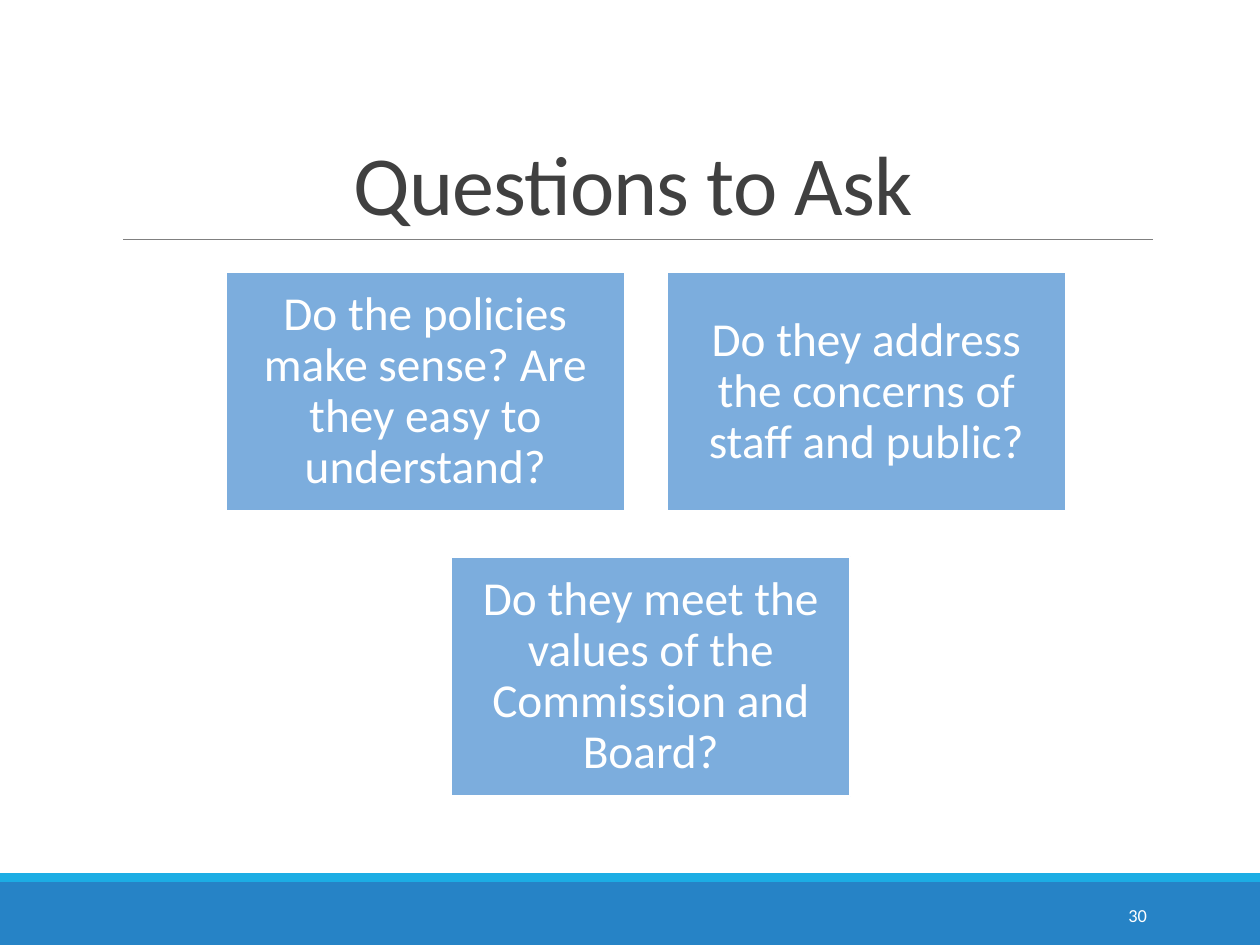
"""Build the "Questions to Ask" slide with three question boxes."""
from pptx import Presentation
from pptx.dml.color import RGBColor
from pptx.enum.shapes import MSO_CONNECTOR, MSO_SHAPE
from pptx.enum.text import MSO_ANCHOR, PP_ALIGN
from pptx.oxml.ns import qn
from pptx.util import Inches, Pt

RECTANGLE = MSO_SHAPE.RECTANGLE
STRAIGHT = MSO_CONNECTOR.STRAIGHT
BOTTOM, MIDDLE = MSO_ANCHOR.BOTTOM, MSO_ANCHOR.MIDDLE
CENTER, RIGHT = PP_ALIGN.CENTER, PP_ALIGN.RIGHT

TITLE = "Questions to Ask"
PAGE_NUMBER = "30"
QUESTIONS = [
    ("Do the policies make sense? Are they easy to understand?", 1.79, 2.16),
    ("Do they address the concerns of staff and public?", 5.29, 2.16),
    ("Do they meet the values of the Commission and Board?", 3.58, 4.42),
]
QUESTION_SIZE = (3.17, 1.9)
FOOTER_BANDS = [("blue", 7, 0.5), ("cyan", 6.93, 0.07)]
FONT = "Calibri"
COLORS = {
    "blue": "2683C6",
    "cyan": "1CADE4",
    "box": "7CADDD",
    "rule": "808080",
    "title": "404040",
    "white": "FFFFFF",
}


def color(name):
    return RGBColor.from_string(COLORS[name])


def add_rectangle(slide, fill, *box):
    rectangle = slide.shapes.add_shape(RECTANGLE, *map(Inches, box))
    rectangle.shadow.inherit = False
    rectangle.fill.solid()
    rectangle.fill.fore_color.rgb = color(fill)
    rectangle.line.fill.background()
    return rectangle


def write(shape, text, size, ink, align, anchor, spacing=1.0):
    frame = shape.text_frame
    frame.text = text
    frame.word_wrap = True
    frame.vertical_anchor = anchor
    paragraph = frame.paragraphs[0]
    paragraph.alignment = align
    paragraph.line_spacing = spacing
    font = paragraph.runs[0].font
    font.name = FONT
    font.size = Pt(size)
    font.color.rgb = color(ink)
    return font


def add_title(slide):
    title = slide.shapes.title
    title.left, title.top, title.width, title.height = map(Inches, (0.9, 0.31, 8.25, 1.59))
    font = write(title, TITLE, 48, "title", CENTER, BOTTOM, 0.85)
    font._element.set("spc", "-50")


def add_title_rule(slide):
    rule = slide.shapes.add_connector(STRAIGHT, *map(Inches, (0.98, 1.9, 9.15, 1.9)))
    rule.line.color.rgb = color("rule")
    rule.line.width = Pt(0.5)
    properties = rule._element.spPr
    properties.append(properties.makeelement(qn("a:effectLst"), {}))


def add_question(slide, question, left, top):
    box = add_rectangle(slide, "box", left, top, *QUESTION_SIZE)
    box.line.color.rgb = color("white")
    box.line.width = Pt(1.25)
    write(box, question, 27, "white", CENTER, MIDDLE, 0.9)
    frame = box.text_frame
    frame.margin_left = frame.margin_right = Inches(0.11)
    frame.margin_top = frame.margin_bottom = Inches(0.11)


def main():
    deck = Presentation()
    deck.slide_width, deck.slide_height = Inches(10), Inches(7.5)
    slide = deck.slides.add_slide(deck.slide_layouts[5])
    for fill, top, height in FOOTER_BANDS:
        add_rectangle(slide, fill, 0, top, 10, height)
    add_title_rule(slide)
    add_title(slide)
    number = slide.shapes.add_textbox(*map(Inches, (8.12, 7.06, 1.08, 0.4)))
    write(number, PAGE_NUMBER, 10.5, "white", RIGHT, MIDDLE)
    for question, left, top in QUESTIONS:
        add_question(slide, question, left, top)
    deck.save("out.pptx")


if __name__ == "__main__":
    main()
